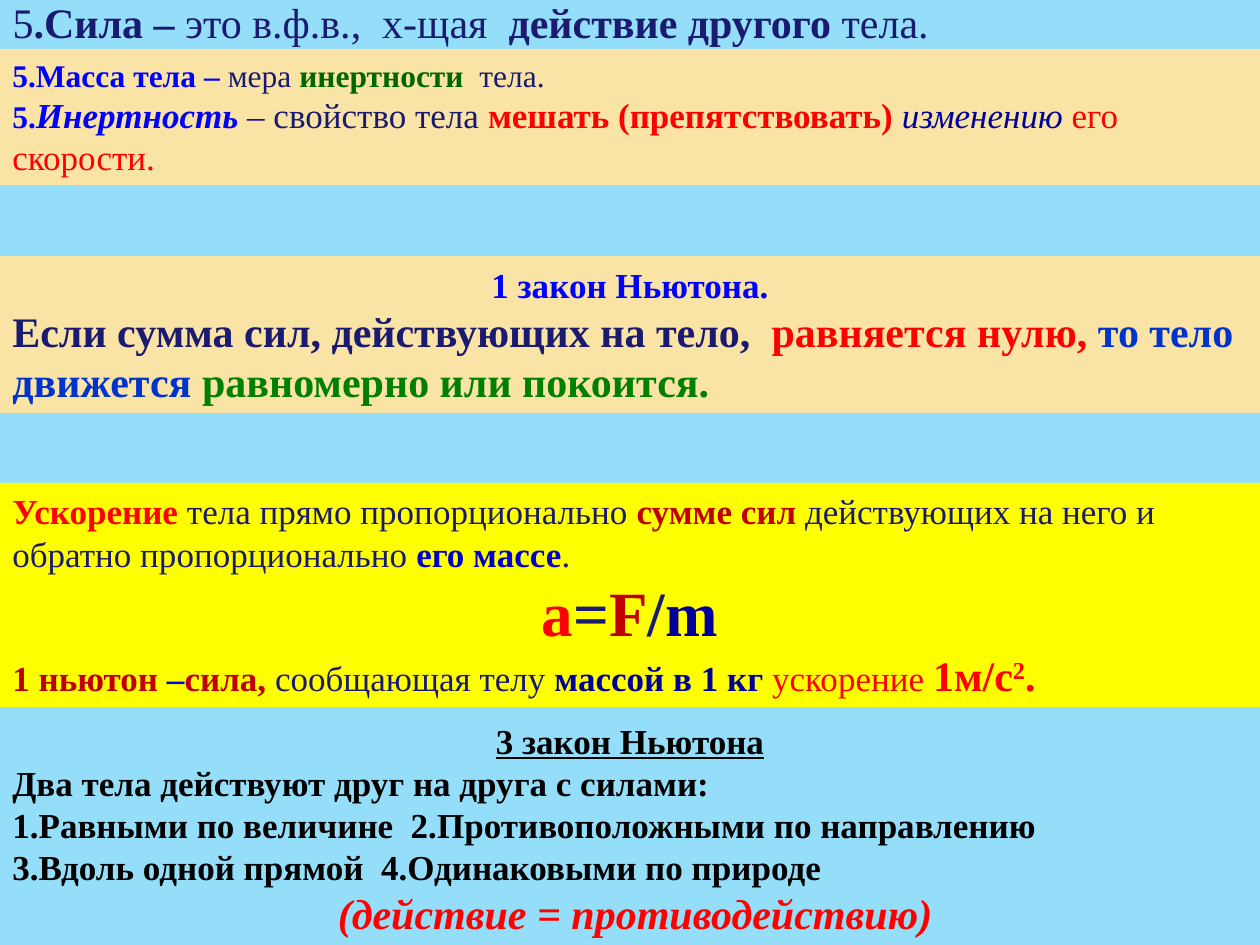
from pptx import Presentation
from pptx.dml.color import RGBColor
from pptx.enum.shapes import MSO_SHAPE
from pptx.enum.text import MSO_ANCHOR, MSO_AUTO_SIZE, PP_ALIGN
from pptx.util import Emu, Pt

SLIDE_WIDTH, SLIDE_HEIGHT = 1260, 945
FONT = "Times New Roman"
COLORS = {
    "sky": "94DEF9",
    "sand": "F9E3A5",
    "yellow": "FFFF00",
    "ink": "1A1A70",
    "blue": "0000FF",
    "medium_blue": "0000CC",
    "royal": "0033CC",
    "navy": "000099",
    "red": "FF0000",
    "crimson": "C00000",
    "green": "008000",
    "dark_green": "006600",
    "black": "000000",
}
LEFT, CENTER = PP_ALIGN.LEFT, PP_ALIGN.CENTER

FORCE = [
    (LEFT, 24, [
        ("5", "ink", ""),
        (".Сила –", "ink", "b"),
        (" это в.ф.в.,  х-щая  ", "ink", ""),
        ("действие другого", "ink", "b"),
        (" тела.", "ink", ""),
    ]),
]
MASS = [
    (LEFT, 18, [
        ("5.Масса тела –", "blue", "b"),
        (" мера ", "ink", ""),
        ("инертности  ", "dark_green", "b"),
        ("тела.", "ink", ""),
    ]),
    (LEFT, 20, [
        ("5.", "blue", "b", 18),
        ("Инертность", "blue", "bi"),
        (" – свойство тела ", "ink", ""),
        ("мешать (препятствовать) ", "red", "b"),
        ("изменению", "navy", "i"),
        (" его скорости.", "red", ""),
    ]),
]
FIRST_LAW = [
    (CENTER, 20, [("1 закон Ньютона.", "blue", "b")]),
    (LEFT, 24, [
        ("Если сумма сил, действующих на тело,", "ink", "b"),
        ("  равняется нулю, ", "red", "b"),
        ("то тело движется ", "royal", "b"),
        ("равномерно или покоится.", "green", "b"),
    ]),
]
SECOND_LAW = [
    (LEFT, 20, [
        ("Ускорение ", "red", "b"),
        ("тела прямо пропорционально ", "ink", ""),
        ("сумме сил", "crimson", "b"),
        (" действующих на него и обратно пропорционально ", "ink", ""),
        ("его массе", "medium_blue", "b"),
        (".", "ink", ""),
    ]),
    (CENTER, 36, [
        ("а", "red", "b"),
        ("=", "ink", "b"),
        ("F", "crimson", "b"),
        ("/", "ink", "b"),
        ("m", "navy", "b"),
    ]),
    (LEFT, 20, [
        ("1 ньютон", "crimson", "b"),
        (" –", "blue", "b"),
        ("сила,", "crimson", "b"),
        (" сообщающая телу ", "ink", ""),
        ("массой в 1 кг ", "navy", "b"),
        ("ускорение ", "red", ""),
        ("1м/с", "red", "b", 24),
        ("2", "red", "b^", 24),
        (".", "red", "b", 24),
    ]),
]
THIRD_LAW = [
    (CENTER, 20, [("3 закон Ньютона", "black", "bu")]),
    (LEFT, 20, [("Два тела действуют друг на друга с силами:", "black", "b")]),
    (LEFT, 20, [("1.Равными по величине  2.Противоположными по направлению", "black", "b")]),
    (LEFT, 20, [("3.Вдоль одной прямой  4.Одинаковыми по природе", "black", "b")]),
    (CENTER, 24, [
        (" ", "red", "b"),
        ("(действие = противодействию)", "red", "bi"),
    ]),
]


def px(length):
    return Emu(round(length * 914400 / 126))


def color(name):
    return RGBColor.from_string(COLORS[name])


def add_run(paragraph, paragraph_size, text, color_name, style, size=None):
    run = paragraph.add_run()
    run.text = text
    font = run.font
    font.name = FONT
    font.size = Pt(size or paragraph_size)
    font.color.rgb = color(color_name)
    font.bold = "b" in style
    font.italic = "i" in style
    font.underline = "u" in style
    if "^" in style:
        run._r.get_or_add_rPr().set("baseline", "30000")


def fill_text(shape, paragraphs, anchor=MSO_ANCHOR.MIDDLE):
    frame = shape.text_frame
    frame.word_wrap = True
    frame.auto_size = MSO_AUTO_SIZE.SHAPE_TO_FIT_TEXT
    frame.vertical_anchor = anchor
    for index, (alignment, size, runs) in enumerate(paragraphs):
        paragraph = frame.add_paragraph() if index else frame.paragraphs[0]
        paragraph.alignment = alignment
        for run in runs:
            add_run(paragraph, size, *run)


def place_title(slide, top, height, paragraphs):
    title = slide.shapes.title
    title.left, title.top = px(0), px(top)
    title.width, title.height = px(SLIDE_WIDTH), px(height)
    fill_text(title, paragraphs, MSO_ANCHOR.TOP)


def add_band(slide, top, height, fill_name, paragraphs):
    band = slide.shapes.add_shape(
        MSO_SHAPE.RECTANGLE, px(0), px(top), px(SLIDE_WIDTH), px(height))
    band.shadow.inherit = False
    band.fill.solid()
    band.fill.fore_color.rgb = color(fill_name)
    band.line.fill.background()
    fill_text(band, paragraphs)


def add_text(slide, top, height, paragraphs):
    box = slide.shapes.add_textbox(px(0), px(top), px(SLIDE_WIDTH), px(height))
    fill_text(box, paragraphs)


def main():
    presentation = Presentation()
    presentation.slide_width = px(SLIDE_WIDTH)
    presentation.slide_height = px(SLIDE_HEIGHT)
    slide = presentation.slides.add_slide(presentation.slide_layouts[5])
    slide.background.fill.solid()
    slide.background.fill.fore_color.rgb = color("sky")

    place_title(slide, -10, 63, FORCE)
    add_band(slide, 49, 136, "sand", MASS)
    add_band(slide, 483, 224, "yellow", SECOND_LAW)
    add_text(slide, 712, 233, THIRD_LAW)
    add_band(slide, 256, 157, "sand", FIRST_LAW)
    presentation.save("out.pptx")


if __name__ == "__main__":
    main()
